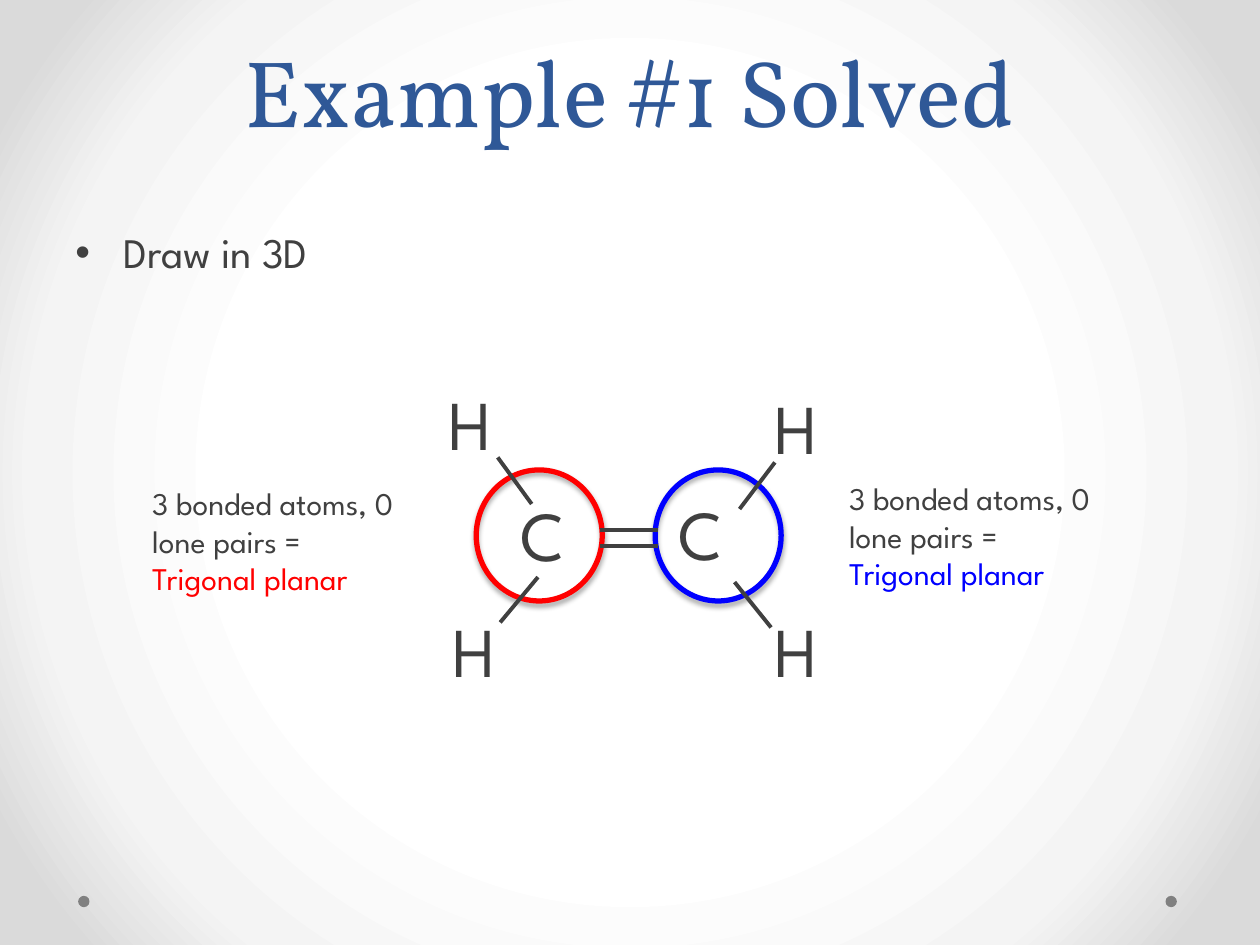
from dataclasses import dataclass
from typing import Any, NamedTuple

from lxml.etree import SubElement
from pptx import Presentation
from pptx.dml.color import RGBColor
from pptx.enum.shapes import MSO_CONNECTOR as Connector, MSO_SHAPE as Shape
from pptx.enum.text import MSO_ANCHOR as Anchor, MSO_AUTO_SIZE as AutoSize, PP_ALIGN as Align
from pptx.oxml import parse_xml
from pptx.oxml.ns import nsdecls, qn
from pptx.util import Inches, Pt


@dataclass(frozen=True)
class Theme:
    title_font: str = "Vollkorn"
    body_font: str = "League Spartan"
    title_color: str = "2F5897"
    ink: str = "404040"
    dot: str = "808080"
    red: str = "FF0000"
    blue: str = "0000FF"
    title_size: int = 54
    atom_size: int = 40
    body_size: int = 24
    note_size: int = 18
    bond_width: float = 2.25
    ring_width: float = 3
    backdrop: tuple = ((50, "FFFFFF"), (76, "F4F4F4"), (92, "DADADA"))


class Box(NamedTuple):
    left: float
    top: float
    width: float
    height: float


class Line(NamedTuple):
    text: str
    color: str


class Atom(NamedTuple):
    symbol: str
    box: Box
    wrap: bool = False


class Bond(NamedTuple):
    start: tuple[float, float]
    end: tuple[float, float]


class Center(NamedTuple):
    ring: Box
    note: Box
    color: str


THEME = Theme()
DOT_LEFTS = (9.25, 0.62)
CENTERS = (
    Center(Box(5.2, 3.73, 1, 1.04), Box(6.64, 3.75, 2.39, 1.01), THEME.blue),
    Center(Box(3.78, 3.73, 1, 1.04), Box(1.11, 3.79, 2.39, 1.01), THEME.red),
)
ATOMS = (
    Atom("C", Box(4.03, 3.85, 0.73, 0.82), True),
    Atom("C", Box(5.29, 3.84, 0.66, 0.77)),
    Atom("H", Box(3.46, 2.97, 0.59, 0.77)),
    Atom("H", Box(3.49, 4.77, 0.59, 0.77)),
    Atom("H", Box(6.05, 3, 0.59, 0.77)),
    Atom("H", Box(6.05, 4.77, 0.59, 0.77)),
)
BONDS = (
    Bond((4.22, 4), (3.95, 3.63)),
    Bond((3.97, 4.94), (4.27, 4.58)),
    Bond((4.76, 4.21), (5.22, 4.21)),
    Bond((4.76, 4.33), (5.22, 4.33)),
    Bond((5.87, 4.04), (6.15, 3.67)),
    Bond((6.12, 4.98), (5.83, 4.62)),
)


def color(value: str) -> RGBColor:
    return RGBColor.from_string(value)


def apply(target: Any, values: dict[str, Any]) -> None:
    for name, value in values.items():
        setattr(target, name, value)


def paint_background(slide: Any) -> None:
    slide.background.fill.gradient()
    gradient = slide.element.find(".//" + qn("a:gradFill"))
    for child in list(gradient):
        gradient.remove(child)
    stops = SubElement(gradient, qn("a:gsLst"))
    for position, value in THEME.backdrop:
        stop = SubElement(stops, qn("a:gs"), pos=str(position * 1000))
        SubElement(stop, qn("a:srgbClr"), val=value)
    circle = SubElement(gradient, qn("a:path"), path="circle")
    SubElement(circle, qn("a:fillToRect"), l="50000", t="50000", r="50000", b="50000")


def add_text(shapes: Any, box: Box, lines: list[Line], size: float,
             font: str = THEME.body_font, frame_format: dict[str, Any] | None = None,
             paragraph_format: dict[str, Any] | None = None) -> Any:
    frame = shapes.add_textbox(*map(Inches, box)).text_frame
    apply(frame, {"word_wrap": True, "auto_size": AutoSize.NONE} | (frame_format or {}))
    for index, line in enumerate(lines):
        paragraph = frame.add_paragraph() if index else frame.paragraphs[0]
        apply(paragraph, paragraph_format or {})
        run = paragraph.add_run()
        run.text = line.text
        apply(run.font, {"name": font, "size": Pt(size)})
        run.font.color.rgb = color(line.color)
    return frame


def add_bullet(paragraph: Any, indent: float) -> None:
    properties = paragraph._p.get_or_add_pPr()
    properties.set("marL", str(Inches(indent)))
    properties.set("indent", str(-Inches(indent)))
    SubElement(properties, qn("a:buFont"), typeface="Arial")
    SubElement(properties, qn("a:buChar"), char="•")


def add_dot(shapes: Any, left: float) -> None:
    dot = shapes.add_shape(Shape.OVAL, *map(Inches, Box(left, 7.11, 0.09, 0.09)))
    dot.shadow.inherit = False
    dot.fill.solid()
    dot.fill.fore_color.rgb = color(THEME.dot)
    dot.line.fill.background()


def add_ring(shapes: Any, center: Center) -> None:
    ring = shapes.add_shape(Shape.OVAL, *map(Inches, center.ring))
    ring.fill.background()
    ring.line.color.rgb = color(center.color)
    ring.line.width = Pt(THEME.ring_width)
    ring._element.spPr.append(parse_xml(
        f'<a:effectLst {nsdecls("a")}><a:outerShdw blurRad="{Pt(3.1)}" dist="{Pt(1.8)}" '
        'dir="5400000" rotWithShape="0"><a:srgbClr val="000000"><a:alpha val="35000"/>'
        '</a:srgbClr></a:outerShdw></a:effectLst>'))


def add_note(shapes: Any, center: Center) -> None:
    lines = [Line("3 bonded atoms, 0 lone pairs =", THEME.ink),
             Line("Trigonal planar", center.color)]
    add_text(shapes, center.note, lines, THEME.note_size,
             frame_format={"auto_size": AutoSize.SHAPE_TO_FIT_TEXT})


def add_atom(shapes: Any, atom: Atom) -> None:
    add_text(shapes, atom.box, [Line(atom.symbol, THEME.ink)], THEME.atom_size,
             frame_format={"word_wrap": atom.wrap, "auto_size": AutoSize.SHAPE_TO_FIT_TEXT})


def add_bond(shapes: Any, bond: Bond) -> None:
    line = shapes.add_connector(Connector.STRAIGHT, *map(Inches, bond.start + bond.end))
    line.line.color.rgb = color(THEME.ink)
    line.line.width = Pt(THEME.bond_width)
    SubElement(line._element.spPr, qn("a:effectLst"))


def main() -> None:
    presentation = Presentation()
    apply(presentation, {"slide_width": Inches(10), "slide_height": Inches(7.5)})
    slide = presentation.slides.add_slide(presentation.slide_layouts[6])
    paint_background(slide)
    for left in DOT_LEFTS:
        add_dot(slide.shapes, left)
    add_text(slide.shapes, Box(0.5, 0, 9, 1.21), [Line("Example #1 Solved", THEME.title_color)],
             THEME.title_size, THEME.title_font, {"vertical_anchor": Anchor.BOTTOM},
             {"alignment": Align.CENTER, "line_spacing": Pt(58)})
    body = add_text(slide.shapes, Box(0.5, 1.75, 9, 4.95), [Line("Draw in 3D", THEME.ink)],
                    THEME.body_size, paragraph_format={"space_before": Pt(4.8)})
    add_bullet(body.paragraphs[0], 0.38)
    for center in CENTERS:
        add_ring(slide.shapes, center)
    for center in CENTERS:
        add_note(slide.shapes, center)
    molecule = slide.shapes.add_group_shape()
    for atom in ATOMS:
        add_atom(molecule.shapes, atom)
    for bond in BONDS:
        add_bond(molecule.shapes, bond)
    presentation.save("out.pptx")


if __name__ == "__main__":
    main()
